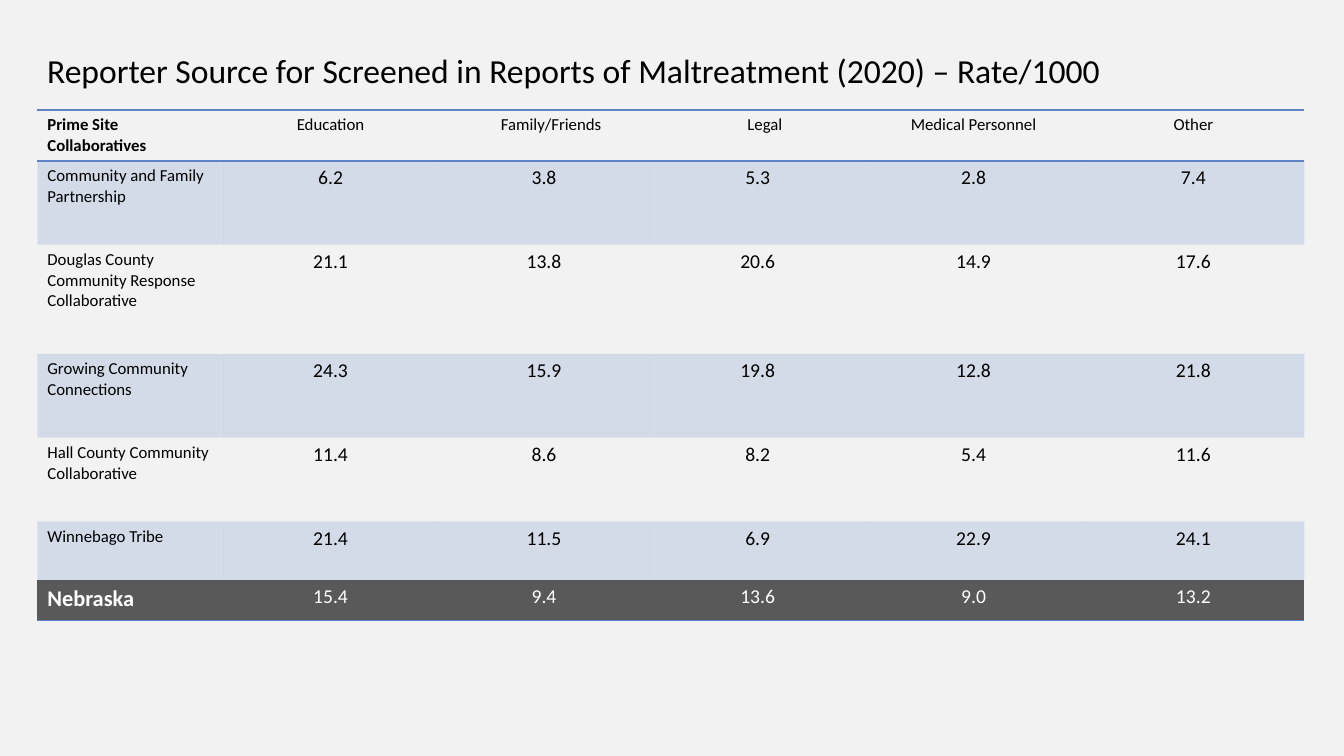
from lxml import etree
from pptx import Presentation
from pptx import util as u
from pptx.dml import color
from pptx.enum import text
from pptx.oxml import ns

BLACK = color.RGBColor(0x00, 0x00, 0x00)
WHITE = color.RGBColor(0xFF, 0xFF, 0xFF)
PAPER = color.RGBColor(0xF2, 0xF2, 0xF2)
BLUE = color.RGBColor(0x5C, 0x83, 0xC4)
CHARCOAL = color.RGBColor(0x59, 0x59, 0x59)

NO_GRID_STYLE = "{2D5ABB26-0587-4C30-8999-92F81FD0307C}"
COLUMN_WIDTHS = [4.7, 5.38, 5.38, 0.36, 5.03, 5.49, 5.59]
ROW_HEIGHTS = [1.02, 2.11, 2.75, 2.11, 2.11, 1.48, 1.02]
HEADINGS = ["Prime Site Collaboratives", "Education", "Family/Friends", "Legal",
            "Medical Personnel", "Other"]
RATES = [
    ["Community and Family Partnership", "6.2", "3.8", "5.3", "2.8", "7.4"],
    ["Douglas County Community Response Collaborative",
     "21.1", "13.8", "20.6", "14.9", "17.6"],
    ["Growing Community Connections", "24.3", "15.9", "19.8", "12.8", "21.8"],
    ["Hall County Community Collaborative", "11.4", "8.6", "8.2", "5.4", "11.6"],
    ["Winnebago Tribe", "21.4", "11.5", "6.9", "22.9", "24.1"],
]
STATE_RATES = ["Nebraska", "15.4", "9.4", "13.6", "9.0", "13.2"]
HEADING_COLUMNS = [0, 1, 2, 4, 5, 6]
RATE_COLUMNS = [0, 1, 2, 3, 5, 6]


def write(paragraph, words, alignment=text.PP_ALIGN.LEFT, **font_format):
    """Put words in a paragraph and format its run."""
    paragraph.alignment = alignment
    run = paragraph.add_run()
    run.text = words
    run.font.color.rgb = font_format.pop("ink", BLACK)
    for name, value in {"name": "Calibri", **font_format}.items():
        setattr(run.font, name, value)


def add_title(slide, words):
    """Add the slide heading."""
    title = slide.shapes.add_textbox(u.Cm(0.94), u.Cm(1.15), u.Cm(31.95), u.Cm(1.35))
    frame = title.text_frame
    settings = {"word_wrap": True, "vertical_anchor": text.MSO_ANCHOR.MIDDLE}
    for name, value in settings.items():
        setattr(frame, name, value)
    frame.paragraphs[0].line_spacing = 0.9
    write(frame.paragraphs[0], words, size=u.Pt(24))


def rule_cell(cell, edges):
    """Draw a thin blue line on the given edges of a cell."""
    properties = cell._tc.get_or_add_tcPr()
    for position, edge in enumerate(edges):
        line = etree.Element(ns.qn(f"a:ln{edge}"), w=str(u.Pt(1)))
        solid = etree.SubElement(line, ns.qn("a:solidFill"))
        etree.SubElement(solid, ns.qn("a:srgbClr"), val=str(BLUE))
        properties.insert(position, line)


def fill_cell(cell, shade, alpha=None):
    """Fill a cell, or leave it clear when there is no shade."""
    if shade is None:
        cell.fill.background()
        return
    cell.fill.solid()
    cell.fill.fore_color.rgb = shade
    if alpha:
        for tone in cell._tc.tcPr.iter(ns.qn("a:srgbClr")):
            etree.SubElement(tone, ns.qn("a:alpha"), val=str(alpha * 1000))


def add_row(table, row, words, columns, label, value, shade=None, alpha=None, edges=""):
    """Write one table row with its label and value formats."""
    for column in range(len(COLUMN_WIDTHS)):
        fill_cell(table.cell(row, column), shade, alpha)
        rule_cell(table.cell(row, column), edges)
    for column, following, entry in zip(columns, columns[1:] + [7], words):
        cell = table.cell(row, column)
        if following - column > 1:
            cell.merge(table.cell(row, following - 1))
        if column == 0:
            write(cell.text_frame.paragraphs[0], entry, **label)
        else:
            write(cell.text_frame.paragraphs[0], entry, text.PP_ALIGN.CENTER, **value)


def add_rates_table(slide):
    """Add the table of report rates by collaborative."""
    table = slide.shapes.add_table(
        len(ROW_HEIGHTS), len(COLUMN_WIDTHS), u.Cm(0.94), u.Cm(2.77),
        u.Cm(sum(COLUMN_WIDTHS)), u.Cm(sum(ROW_HEIGHTS))).table
    table.first_row = table.horz_banding = False
    table._tbl.tblPr.find(ns.qn("a:tableStyleId")).text = NO_GRID_STYLE
    for column, width in zip(table.columns, COLUMN_WIDTHS):
        column.width = u.Cm(width)
    for row, height in zip(table.rows, ROW_HEIGHTS):
        row.height = u.Cm(height)

    small, medium = {"size": u.Pt(12)}, {"size": u.Pt(14)}
    add_row(table, 0, HEADINGS, HEADING_COLUMNS, {**small, "bold": True}, small, edges="TB")
    for row, words in enumerate(RATES, 1):
        band = {"shade": BLUE, "alpha": 20} if row % 2 else {}
        add_row(table, row, words, RATE_COLUMNS, small, medium, **band)
    add_row(table, len(RATES) + 1, STATE_RATES, RATE_COLUMNS,
            {"size": u.Pt(16), "bold": True, "ink": WHITE},
            {**medium, "ink": WHITE}, shade=CHARCOAL, edges="B")


def main():
    """Build and save the slide."""
    deck = Presentation()
    deck.slide_width, deck.slide_height = u.Cm(33.87), u.Cm(19.05)
    slide = deck.slides.add_slide(deck.slide_layouts[6])
    slide.background.fill.solid()
    slide.background.fill.fore_color.rgb = PAPER
    add_rates_table(slide)
    add_title(slide, "Reporter Source for Screened in Reports of Maltreatment (2020) – Rate/1000")
    deck.save("out.pptx")


if __name__ == "__main__":
    main()
